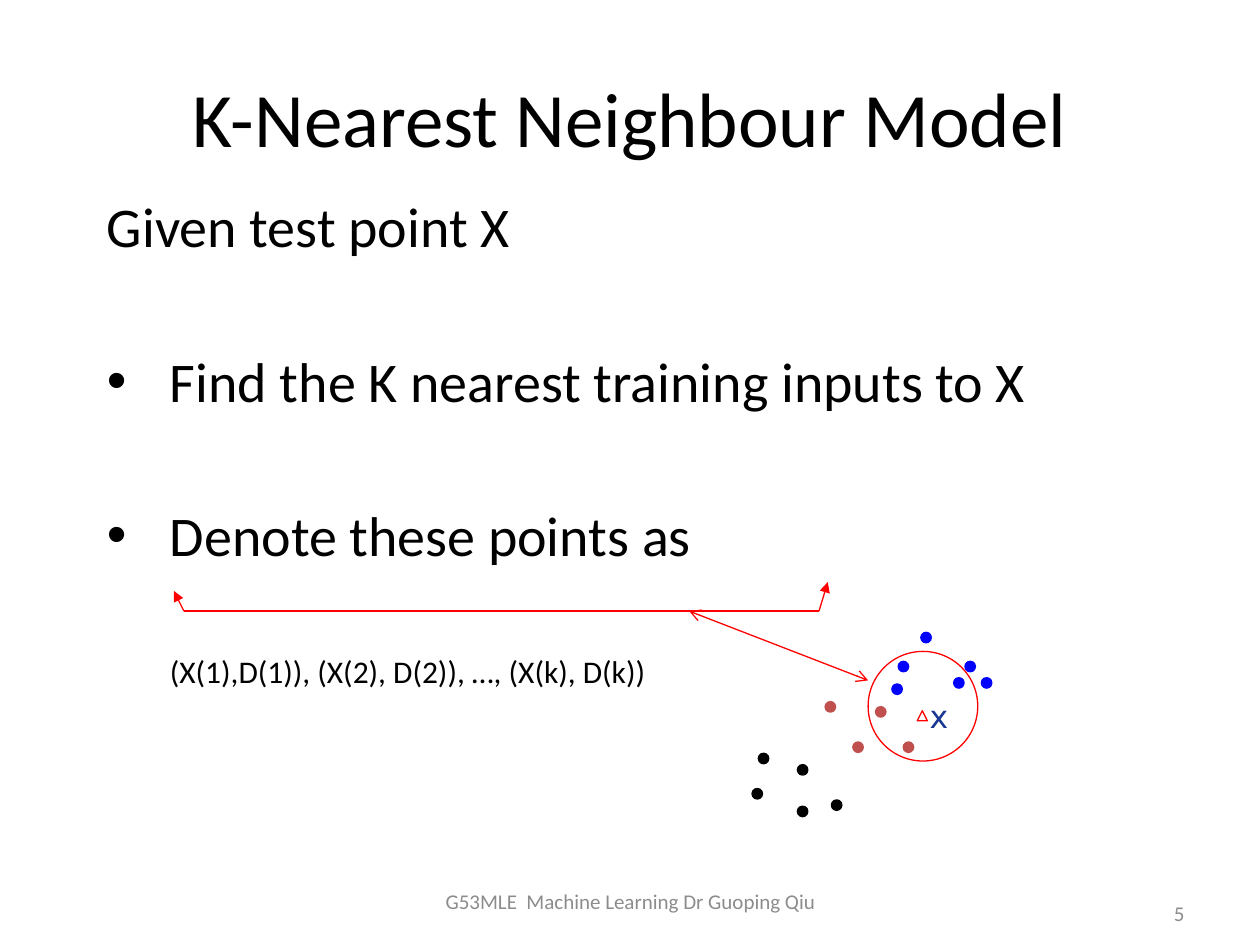
from pptx import Presentation, util as u
from pptx.dml.color import RGBColor
from pptx.enum import shapes, text
from pptx.oxml.ns import qn
from lxml import etree

RED, BLUE, BROWN, BLACK, GREY = "FF0000", "0000FF", "C0504D", "000000", "8C8C8C"
DOTS = {
    BLUE: [(7.31, 5.02), (7.13, 5.25), (7.66, 5.25), (7.79, 5.38), (7.08, 5.43), (7.57, 5.38)],
    BROWN: [(6.55, 5.57), (6.95, 5.61), (6.77, 5.89), (7.17, 5.89)],
    BLACK: [(6.02, 5.98), (6.33, 6.07), (5.97, 6.26), (6.6, 6.35), (6.33, 6.4)],
}
BODY = [
    ("Given test point X", 32, 0, False),
    ("Find the K nearest training inputs to X", 32, 50, True),
    ("Denote these points as", 32, 50, True),
    ("(X(1),D(1)), (X(2), D(2)), …, (X(k), D(k))", 18, 48, False),
]


def rgb(color):
    return RGBColor.from_string(color)


def add_run(p, words, size, color=BLACK, font="Calibri"):
    r = p.add_run()
    r.text = words
    r.font.size = u.Pt(size)
    r.font.name = font
    r.font.color.rgb = rgb(color)


def add_box(s, box, anchor=text.MSO_ANCHOR.MIDDLE, wrap=True):
    tf = s.shapes.add_textbox(*map(u.Inches, box)).text_frame
    tf.word_wrap = wrap
    tf.vertical_anchor = anchor
    return tf


def add_label(s, box, words, size, color, align, **options):
    tf = add_box(s, box, **options)
    p = tf.paragraphs[0]
    p.alignment = align
    add_run(p, words, size, color)
    return tf


def add_body(s):
    tf = add_box(s, (0.75, 1.47, 8.5, 5.09), text.MSO_ANCHOR.TOP)
    for i, (words, size, before, bullet) in enumerate(BODY):
        p = tf.add_paragraph() if i else tf.paragraphs[0]
        p.space_before = u.Pt(before)
        add_run(p, words, size)
        pPr = p._p.get_or_add_pPr()
        pPr.set("marL", str(u.Inches(0.5) if i else 0))
        if bullet:
            pPr.set("indent", str(-u.Inches(0.5)))
            etree.SubElement(pPr, qn("a:buFont")).set("typeface", "Arial")
            etree.SubElement(pPr, qn("a:buChar")).set("char", "•")


def add_mark(s, kind, x, y, size, color, width, filled=False):
    sp = s.shapes.add_shape(kind, *map(u.Inches, (x, y, size, size)))
    sp.shadow.inherit = False
    if filled:
        sp.fill.solid()
        sp.fill.fore_color.rgb = rgb(color)
    else:
        sp.fill.background()
    sp.line.color.rgb = rgb(color)
    sp.line.width = u.Pt(width)


def add_line(s, start, end, head=None, tail=None):
    c = s.shapes.add_connector(shapes.MSO_CONNECTOR.STRAIGHT, *map(u.Inches, start + end))
    c.line.color.rgb = rgb(RED)
    c.line.width = u.Pt(0.75)
    ln = c.line._get_or_add_ln()
    for tag, kind in (("a:headEnd", head), ("a:tailEnd", tail)):
        if kind:
            etree.SubElement(ln, qn(tag)).set("type", kind)
    etree.SubElement(c._element.spPr, qn("a:effectLst"))


def add_scatter(s):
    oval = shapes.MSO_SHAPE.OVAL
    for color, points in DOTS.items():
        for x, y in points:
            add_mark(s, oval, x, y, 0.08, color, 1, filled=True)
    add_mark(s, shapes.MSO_SHAPE.ISOSCELES_TRIANGLE, 7.28, 5.64, 0.08, RED, 0.75)
    add_mark(s, oval, 6.89, 5.17, 0.87, RED, 0.75)
    tf = add_box(s, (7.28, 5.48, 0.35, 0.4), text.MSO_ANCHOR.TOP, wrap=False)
    add_run(tf.paragraphs[0], "x", 18, "193693", "DejaVu Sans")


def add_bracket(s):
    left, right = (1.46, 4.85), (6.5, 4.85)
    add_line(s, (5.47, 4.85), (6.89, 5.4), head="arrow", tail="arrow")
    add_line(s, left, right)
    add_line(s, left, (1.38, 4.69), tail="triangle")
    add_line(s, right, (6.57, 4.62), tail="triangle")


def main():
    prs = Presentation()
    prs.slide_width, prs.slide_height = u.Inches(10), u.Inches(7.5)
    s = prs.slides.add_slide(prs.slide_layouts[6])
    center, right = text.PP_ALIGN.CENTER, text.PP_ALIGN.RIGHT
    add_label(s, (0.5, 0.3, 9, 1.25), "K-Nearest Neighbour Model", 44, BLACK, center)
    add_body(s)
    add_label(s, (3.42, 6.95, 3.17, 0.4), "G53MLE  Machine Learning Dr Guoping Qiu", 12, GREY, center)
    number = add_label(s, (7.17, 6.95, 2.33, 0.4), "5", 12, GREY, right,
                       anchor=text.MSO_ANCHOR.BOTTOM)
    number.margin_bottom = 0
    add_scatter(s)
    add_bracket(s)
    prs.save("out.pptx")


if __name__ == "__main__":
    main()
